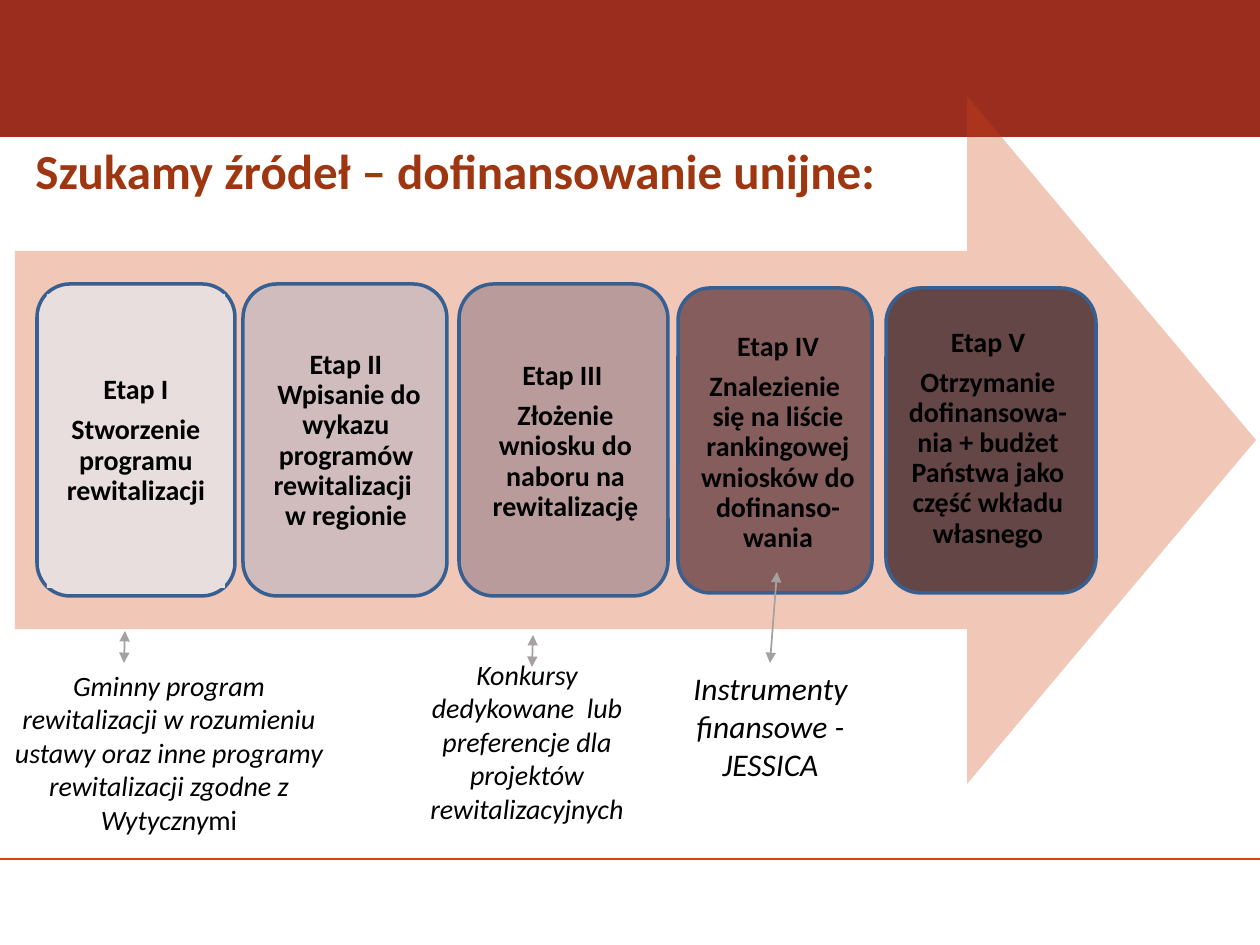
from dataclasses import dataclass
from typing import NamedTuple

from lxml.etree import SubElement
from pptx import Presentation
from pptx.dml.color import RGBColor
from pptx.enum.shapes import MSO_CONNECTOR, MSO_SHAPE as Shape
from pptx.enum.text import MSO_ANCHOR as Anchor, PP_ALIGN as Align
from pptx.oxml.ns import qn
from pptx.util import Emu, Pt

EMU_PER_INCH = 914400
PX_PER_INCH = 126
FONT = "Calibri"
BLACK = RGBColor(0x00, 0x00, 0x00)
BAND = RGBColor(0x9B, 0x2D, 0x1F)
TITLE = RGBColor(0x9E, 0x36, 0x11)
ARROW = RGBColor(0xD3, 0x48, 0x17)
RULE = RGBColor(0xD3, 0x44, 0x12)
BORDER = RGBColor(0x37, 0x60, 0x92)
LINK = RGBColor(0xA6, 0xA1, 0xA1)


class Box(NamedTuple):
    x: int
    y: int
    w: int
    h: int


@dataclass(frozen=True)
class Stage:
    card: Box
    label: Box
    color: RGBColor
    text: str
    filled: bool = False


@dataclass(frozen=True)
class Note:
    box: Box
    size: int
    text: str
    start: tuple[int, int]
    end: tuple[int, int]
    upright: str = ""


STAGES = [
    Stage(Box(37, 284, 198, 312), Box(47, 294, 178, 294), RGBColor(0xE8, 0xDE, 0xDE),
          "Etap I\nStworzenie programu rewitalizacji", filled=True),
    Stage(Box(243, 284, 204, 312), Box(253, 294, 186, 294), RGBColor(0xD0, 0xBC, 0xBC),
          "Etap II\v Wpisanie do wykazu programów rewitalizacji \vw regionie"),
    Stage(Box(459, 284, 209, 312), Box(469, 295, 193, 294), RGBColor(0xB9, 0x9B, 0x9B),
          "Etap III \nZłożenie wniosku do naboru na rewitalizację"),
    Stage(Box(678, 288, 194, 305), Box(684, 314, 188, 258), RGBColor(0x85, 0x5D, 0x5D),
          "Etap IV\nZnalezienie \vsię na liście rankingowej wniosków do dofinanso-\vwania"),
    Stage(Box(886, 288, 210, 305), Box(893, 290, 190, 297), RGBColor(0x64, 0x46, 0x46),
          "Etap V\nOtrzymanie dofinansowa-nia + budżet Państwa jako część wkładu własnego"),
]

NOTES = [
    Note(Box(662, 663, 217, 127), 18, "Instrumenty finansowe - JESSICA",
         (777, 572), (770, 663)),
    Note(Box(392, 651, 270, 183), 16,
         "Konkursy dedykowane  lub preferencje dla projektów rewitalizacyjnych",
         (533, 635), (532, 667)),
    Note(Box(0, 662, 338, 186), 16,
         "Gminny program rewitalizacji w rozumieniu ustawy oraz inne programy "
         "rewitalizacji zgodne z Wytyczny",
         (125, 631), (124, 663), upright="mi"),
]


def px(n: int) -> Emu:
    return Emu(n * EMU_PER_INCH // PX_PER_INCH)


def add_block(s, kind: Shape, box: Box, fill: RGBColor, line: RGBColor | None = None):
    sp = s.shapes.add_shape(kind, *map(px, box))
    sp.shadow.inherit = False
    sp.fill.solid()
    sp.fill.fore_color.rgb = fill
    if line is None:
        sp.line.fill.background()
    else:
        sp.line.color.rgb = line
        sp.line.width = Pt(2)
    return sp


def add_text(s, box: Box, text: str, size: int, color: RGBColor = BLACK,
             bold: bool = False, italic: bool = False,
             align: Align = Align.CENTER, anchor: Anchor = Anchor.TOP):
    sp = s.shapes.add_textbox(*map(px, box))
    tf = sp.text_frame
    tf.word_wrap = True
    tf.vertical_anchor = anchor
    tf.text = text
    for p in tf.paragraphs:
        p.alignment = align
        for r in p.runs:
            style_run(r, size, color, bold, italic)
    return sp


def style_run(r, size: int, color: RGBColor, bold: bool, italic: bool) -> None:
    r.font.name = FONT
    r.font.size = Pt(size)
    r.font.color.rgb = color
    r.font.bold = bold
    r.font.italic = italic


def add_line(s, start: tuple[int, int], end: tuple[int, int], color: RGBColor,
             width: float, arrows: bool = False) -> None:
    c = s.shapes.add_connector(MSO_CONNECTOR.STRAIGHT, *map(px, start + end))
    c.line.color.rgb = color
    c.line.width = Pt(width)
    if arrows:
        ln = c.line._get_or_add_ln()
        for tag in ("a:headEnd", "a:tailEnd"):
            SubElement(ln, qn(tag), type="triangle")
    SubElement(c._element.spPr, qn("a:effectLst"))


def add_big_arrow(s) -> None:
    sp = add_block(s, Shape.RIGHT_ARROW, Box(15, 96, 1241, 688), ARROW)
    sp.adjustments[0] = 0.55
    sp.adjustments[1] = 0.42
    color = sp._element.spPr.find(qn("a:solidFill"))[0]
    SubElement(color, qn("a:alpha"), val="30000")


def add_stage(s, stage: Stage) -> None:
    add_block(s, Shape.ROUNDED_RECTANGLE, stage.card, stage.color, BORDER)
    sp = add_text(s, stage.label, stage.text, 16, bold=True, anchor=Anchor.MIDDLE)
    if stage.filled:
        sp.fill.solid()
        sp.fill.fore_color.rgb = stage.color
    tf = sp.text_frame
    tf.margin_left = tf.margin_right = tf.margin_top = tf.margin_bottom = px(9)
    for p in tf.paragraphs:
        p.line_spacing = 0.9
        p.space_after = Pt(5.6)


def add_note(s, note: Note) -> None:
    sp = add_text(s, note.box, note.text, note.size, italic=True)
    if note.upright:
        r = sp.text_frame.paragraphs[0].add_run()
        r.text = note.upright
        style_run(r, note.size, BLACK, False, False)
    add_line(s, note.start, note.end, LINK, 1, arrows=True)


def main() -> None:
    prs = Presentation()
    prs.slide_width, prs.slide_height = px(1260), px(945)
    s = prs.slides.add_slide(prs.slide_layouts[6])
    add_line(s, (0, 859), (1260, 859), RULE, 0.75)
    add_block(s, Shape.RECTANGLE, Box(0, -1, 1260, 138), BAND)
    add_text(s, Box(23, 125, 1134, 89), "Szukamy źródeł – dofinansowanie unijne:", 28,
             TITLE, bold=True, align=Align.LEFT, anchor=Anchor.MIDDLE)
    add_big_arrow(s)
    for stage in STAGES:
        add_stage(s, stage)
    for note in NOTES:
        add_note(s, note)
    prs.save("out.pptx")


if __name__ == "__main__":
    main()
